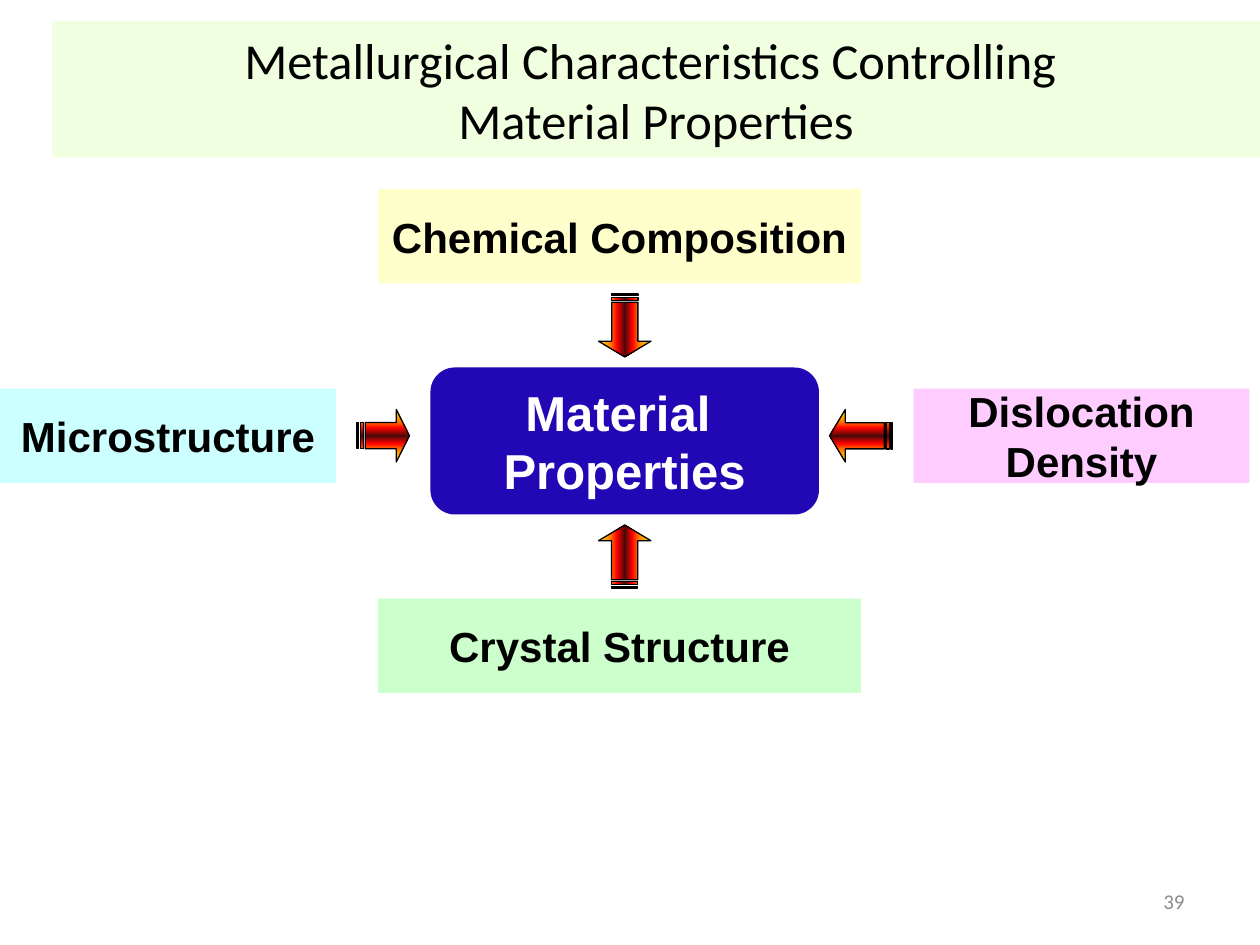
from lxml.etree import SubElement
from pptx import Presentation
from pptx.dml.color import RGBColor
from pptx.enum.shapes import MSO_SHAPE
from pptx.enum.text import MSO_ANCHOR, PP_ALIGN
from pptx.oxml.ns import qn
from pptx.util import Pt

BLACK = RGBColor(0x00, 0x00, 0x00)
WHITE = RGBColor(0xFF, 0xFF, 0xFF)
GRAY = RGBColor(0x8C, 0x8C, 0x8C)
BLUE = RGBColor(0x21, 0x08, 0xB4)
PALE_LIME = RGBColor(0xEF, 0xFF, 0xDF)
YELLOW = RGBColor(0xFF, 0xFF, 0xCC)
GREEN = RGBColor(0xCC, 0xFF, 0xCC)
CYAN = RGBColor(0xCC, 0xFF, 0xFF)
PINK = RGBColor(0xFF, 0xCC, 0xFF)

GOLD = RGBColor(0xFF, 0xF2, 0x00)
ORANGE = RGBColor(0xFF, 0x7A, 0x00)
RED = RGBColor(0xFF, 0x03, 0x00)
MAROON = RGBColor(0x4D, 0x08, 0x08)
FIRE = [(0, GOLD), (23, ORANGE), (35, RED), (50, MAROON),
        (65, RED), (77, ORANGE), (100, GOLD)]

TITLE = {"name": "Calibri", "size": Pt(28.8)}
FACTOR = {"name": "Arial", "size": Pt(24), "bold": True}
CENTER = {"name": "Arial", "size": Pt(28), "bold": True}
NUMBER = {"name": "Calibri", "size": Pt(12)}


class Diagram:
    """Holds the current slide and draws its styled elements."""

    def __init__(self, slide):
        self.shapes = slide.shapes

    def set_text(self, sp, text, font, color, align=PP_ALIGN.CENTER, wrap=True):
        tf = sp.text_frame
        tf.text = text
        tf.word_wrap = wrap
        tf.vertical_anchor = MSO_ANCHOR.MIDDLE
        for p in tf.paragraphs:
            p.alignment = align
            for r in p.runs:
                for name, value in font.items():
                    setattr(r.font, name, value)
                r.font.color.rgb = color

    def label(self, box, text, font, color, align):
        sp = self.shapes.add_textbox(*map(Pt, box))
        self.set_text(sp, text, font, color, align)

    def box(self, box, text, fill, font=FACTOR, color=BLACK,
            kind=MSO_SHAPE.RECTANGLE, wrap=False):
        sp = self.shapes.add_shape(kind, *map(Pt, box))
        sp.shadow.inherit = False
        sp.fill.solid()
        sp.fill.fore_color.rgb = fill
        sp.line.fill.background()
        self.set_text(sp, text, font, color, wrap=wrap)

    def arrow(self, box, rotation, head):
        """Add a striped arrow; head is the head length over the height."""
        sp = self.shapes.add_shape(MSO_SHAPE.STRIPED_RIGHT_ARROW, *map(Pt, box))
        sp.shadow.inherit = False
        sp.adjustments[1] = head
        sp.rotation = rotation
        sp.line.color.rgb = BLACK
        sp.line.width = Pt(0.75)
        sp.fill.gradient()
        sp.fill.gradient_angle = 270
        stops = sp.element.spPr.find(".//" + qn("a:gsLst"))
        for stop in list(stops):
            stops.remove(stop)
        for percent, color in FIRE:
            stop = SubElement(stops, qn("a:gs"), pos=str(percent * 1000))
            SubElement(stop, qn("a:srgbClr"), val=str(color))


def main():
    prs = Presentation()
    prs.slide_width, prs.slide_height = Pt(720), Pt(540)
    d = Diagram(prs.slides.add_slide(prs.slide_layouts[6]))

    d.label((516, 500.5, 168, 28.8), "39", NUMBER, GRAY, PP_ALIGN.RIGHT)
    d.box((30, 12, 690, 78),
          "Metallurgical Characteristics Controlling \vMaterial Properties",
          PALE_LIME, TITLE, wrap=True)
    d.box((246, 210, 222, 84), "Material \nProperties", BLUE, CENTER, WHITE,
          MSO_SHAPE.ROUNDED_RECTANGLE)

    for left, top, width, text, fill in [
        (216, 108, 276, "Chemical Composition", YELLOW),
        (216, 342, 276, "Crystal Structure", GREEN),
        (0, 222, 192, "Microstructure", CYAN),
        (522, 222, 192, "Dislocation\nDensity", PINK),
    ]:
        d.box((left, top, width, 54), text, fill)

    for left, top, width, rotation, head in [
        (339, 303, 36, 270, 0.3),
        (339, 171, 36, 90, 0.3),
        (204, 234, 30, 0, 0.25),
        (474, 234, 36, 180, 0.3),
    ]:
        d.arrow((left, top, width, 30), rotation, head)

    prs.save("out.pptx")


if __name__ == "__main__":
    main()
